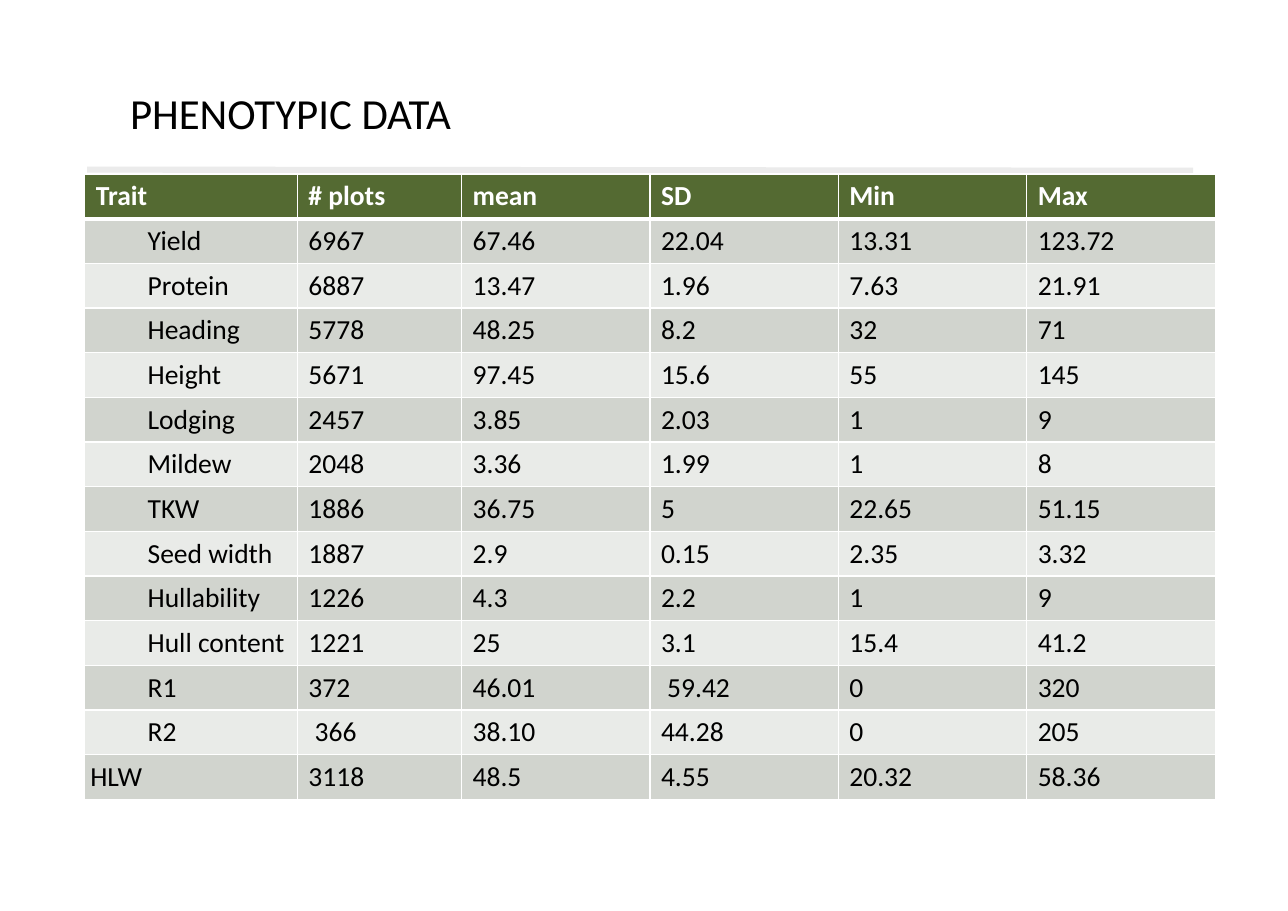
import pptx
import pptx.dml.color
import pptx.enum.text
import pptx.oxml
import pptx.oxml.ns
import pptx.util
from pptx.util import Inches

BLACK = pptx.dml.color.RGBColor(0x00, 0x00, 0x00)
WHITE = pptx.dml.color.RGBColor(0xFF, 0xFF, 0xFF)
RULE_GREY = pptx.dml.color.RGBColor(0xEB, 0xEB, 0xEB)
HEADER_GREEN = pptx.dml.color.RGBColor(0x54, 0x6A, 0x32)
DARK_BAND = pptx.dml.color.RGBColor(0xD1, 0xD4, 0xCE)
LIGHT_BAND = pptx.dml.color.RGBColor(0xE9, 0xEB, 0xE8)

TRAIT_ROWS = [
    ["Trait", "# plots", "mean", "SD", "Min", "Max"],
    ["Yield", "6967", "67.46", "22.04", "13.31", "123.72"],
    ["Protein", "6887", "13.47", "1.96", "7.63", "21.91"],
    ["Heading", "5778", "48.25", "8.2", "32", "71"],
    ["Height", "5671", "97.45", "15.6", "55", "145"],
    ["Lodging", "2457", "3.85", "2.03", "1", "9"],
    ["Mildew", "2048", "3.36", "1.99", "1", "8"],
    ["TKW", "1886", "36.75", "5", "22.65", "51.15"],
    ["Seed width", "1887", "2.9", "0.15", "2.35", "3.32"],
    ["Hullability", "1226", "4.3", "2.2", "1", "9"],
    ["Hull content", "1221", "25", "3.1", "15.4", "41.2"],
    ["R1", "372", "46.01", " 59.42", "0", "320"],
    ["R2", " 366", "38.10", "44.28", "0", "205"],
    ["HLW", "3118", "48.5", "4.55", "20.32", "58.36"],
]
COLUMN_WIDTHS = [1.93, 1.49, 1.71, 1.71, 1.71, 1.71]


def style_text(para, size, color, bold=False):
    for span in para.runs:
        span.font.name = "Calibri"
        span.font.size = pptx.util.Pt(size)
        span.font.bold = bold
        span.font.color.rgb = color


def add_border(cell, side, points):
    cell._tc.get_or_add_tcPr().append(pptx.oxml.parse_xml(
        f'<a:{side} {pptx.oxml.ns.nsdecls("a")} w="{pptx.util.Pt(points)}">'
        f'<a:solidFill><a:srgbClr val="{WHITE}"/></a:solidFill></a:{side}>'))


deck = pptx.Presentation()
deck.slide_width = Inches(11.69)
deck.slide_height = Inches(8.27)
page = deck.slides.add_slide(deck.slide_layouts[6])

rule = page.shapes.add_connector(
    pptx.enum.shapes.MSO_CONNECTOR.STRAIGHT,
    Inches(0.79), Inches(1.54), Inches(10.83), Inches(1.55))
rule.line.color.rgb = RULE_GREY
rule.line.width = pptx.util.Pt(4)
rule._element.spPr.append(pptx.oxml.parse_xml(
    f'<a:effectLst {pptx.oxml.ns.nsdecls("a")}/>'))

title_box = page.shapes.add_textbox(
    Inches(1.18), Inches(0.79), Inches(9.65), Inches(0.59))
title_frame = title_box.text_frame
title_frame.word_wrap = True
title_frame.margin_left = title_frame.margin_right = 0
title_frame.margin_top = title_frame.margin_bottom = 0
title_frame.vertical_anchor = pptx.enum.text.MSO_ANCHOR.TOP
title_frame.text = "PHENOTYPIC DATA"
style_text(title_frame.paragraphs[0], 28, BLACK)

table = page.shapes.add_table(
    len(TRAIT_ROWS), len(COLUMN_WIDTHS),
    Inches(0.77), Inches(1.58), Inches(10.25), Inches(5.68)).table
table.horz_banding = False
for column, width in zip(table.columns, COLUMN_WIDTHS):
    column.width = Inches(width)

last_row = len(TRAIT_ROWS) - 1
for row_index, values in enumerate(TRAIT_ROWS):
    is_header = row_index == 0
    band = DARK_BAND if row_index % 2 else LIGHT_BAND
    for column_index, value in enumerate(values):
        cell = table.cell(row_index, column_index)
        cell.text = value
        para = cell.text_frame.paragraphs[0]
        style_text(para, 18, WHITE if is_header else BLACK, is_header)
        if column_index == 0 and not is_header:
            cell.margin_left = cell.margin_right = Inches(0.05)
            if row_index < last_row:
                para.level = 1
                para._p.get_or_add_pPr().set("marL", str(Inches(0.52)))
        add_border(cell, "lnL", 1)
        add_border(cell, "lnR", 1)
        add_border(cell, "lnT", 3 if row_index == 1 else 1)
        add_border(cell, "lnB", 3 if is_header else 1)
        cell.fill.solid()
        cell.fill.fore_color.rgb = HEADER_GREEN if is_header else band

deck.save("out.pptx")
